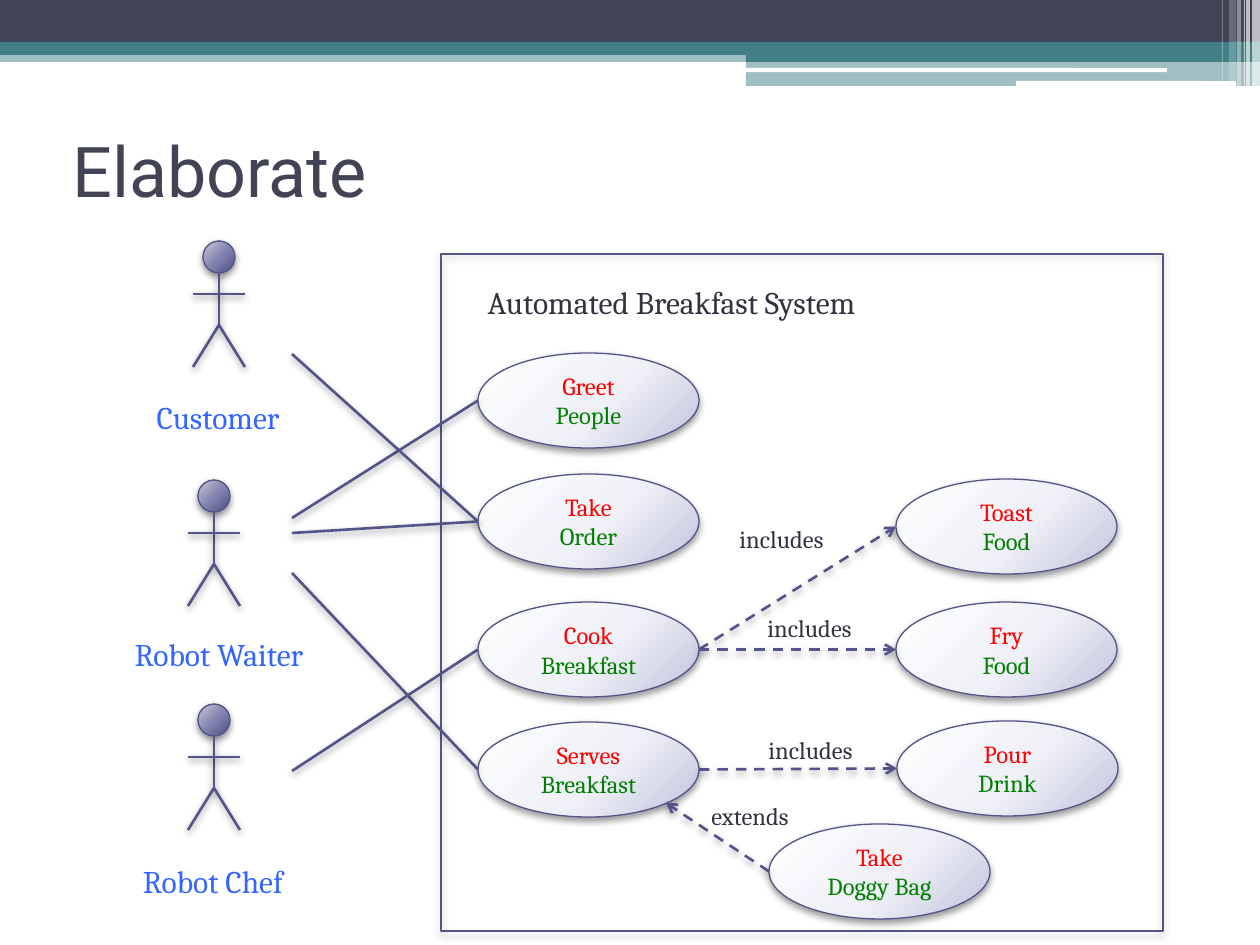
"""Build the Elaborate slide: a use case diagram of an automated breakfast system."""
from lxml.etree import SubElement
from pptx import Presentation
from pptx.dml.color import RGBColor as RGB
from pptx.enum.dml import MSO_LINE_DASH_STYLE as DASH
from pptx.enum.shapes import MSO_CONNECTOR as CONNECTOR, MSO_SHAPE as SHAPE
from pptx.enum.text import MSO_ANCHOR as ANCHOR, PP_ALIGN as ALIGN
from pptx.oxml.ns import qn
from pptx.util import Pt

PX = 914400 / 126
WIDTH, HEIGHT = 1260, 945
NAVY, TEAL, WHITE = RGB(0x42, 0x44, 0x56), RGB(0x43, 0x80, 0x86), RGB(255, 255, 255)
LINE, INK = RGB(0x53, 0x54, 0x8A), RGB(0x32, 0x33, 0x41)
BLUE, RED, GREEN = RGB(0x33, 0x66, 0xFF), RGB(255, 0, 0), RGB(0, 0x80, 0)
BLACK = RGB(0, 0, 0)
HEAD_STOPS = [(0, RGB(0xC9, 0xC9, 0xDA)), (55, RGB(0x7F, 0x80, 0xAE)),
              (100, RGB(0x4D, 0x4E, 0x81))]
CASE_STOPS = [(0, RGB(0xFE, 0xFE, 0xFE)), (55, RGB(0xF0, 0xF1, 0xF7)),
              (100, RGB(0xC2, 0xC2, 0xDD))]
GLOW_RECT = {"l": -40, "t": -90, "r": 140, "b": 190}

TITLE = ("Elaborate", (60, 96, 1134, 147))
BANDS = [
    ((0, 50, 1260, 12), TEAL, 50),
    ((0, 0, 1260, 42), NAVY, 100),
    ((0, 42, 1260, 13), TEAL, 100),
    ((746, 49, 514, 13), TEAL, 100),
    ((746, 61, 514, 25), TEAL, 50),
]
PILLS = [((745, 68, 422, 4), WHITE, 100), ((1016, 81, 220, 5), WHITE, 100)]
STRIPES = [
    ((1252, 0, 8, 86), WHITE, 65), ((1246, 0, 4, 86), WHITE, 65),
    ((1244, 0, 1, 86), WHITE, 60), ((1237, 0, 4, 86), WHITE, 40),
    ((1229, 0, 7, 81), WHITE, 20), ((1222, 0, 1, 81), WHITE, 30),
]
SYSTEM = ("Automated Breakfast System", (441, 254, 722, 677), (446, 277, 451, 50))
ACTORS = [
    ("Customer", (203, 241), (113, 392, 210, 50)),
    ("Robot Waiter", (198, 480), (93, 629, 252, 50)),
    ("Robot Chef", (198, 704), (108, 856, 210, 50)),
]
CASES = {
    ("Greet", "People"): (478, 353),
    ("Take", "Order"): (478, 474),
    ("Cook", "Breakfast"): (478, 602),
    ("Serves", "Breakfast"): (478, 722),
    ("Toast", "Food"): (896, 479),
    ("Fry", "Food"): (896, 602),
    ("Pour", "Drink"): (897, 721),
    ("Take", "Doggy Bag"): (769, 824),
}
CASE_W, CASE_H = 221, 95
LINK_X = 292
ACTOR_LINKS = [
    (518, ("Greet", "People")), (354, ("Take", "Order")), (533, ("Take", "Order")),
    (573, ("Serves", "Breakfast")), (771, ("Cook", "Breakfast")),
]
LEFT, RIGHT, LOWER_RIGHT = (0, 0.5), (1, 0.5), (0.85, 0.85)
CASE_LINKS = [
    ("includes", ("Cook", "Breakfast"), RIGHT, ("Toast", "Food"), LEFT, (727, 518, 117, 43)),
    ("includes", ("Cook", "Breakfast"), RIGHT, ("Fry", "Food"), LEFT, (755, 607, 117, 43)),
    ("includes", ("Serves", "Breakfast"), RIGHT, ("Pour", "Drink"), LEFT, (756, 729, 117, 43)),
    ("extends", ("Take", "Doggy Bag"), LEFT, ("Serves", "Breakfast"), LOWER_RIGHT,
     (699, 795, 110, 43)),
]


def emu(lengths):
    return [round(length * PX) for length in lengths]


def apply(target, values):
    for name, value in values.items():
        setattr(target, name, value)


def child(parent, tag, **attributes):
    return SubElement(parent, qn(tag), {k: str(v) for k, v in attributes.items()})


def cast_shadow(part, opacity=40):
    properties = part._element.spPr
    effects = properties.find(qn("a:effectLst"))
    if effects is None:
        effects = child(properties, "a:effectLst")
    shadow = child(effects, "a:outerShdw", blurRad=Pt(4.1), dist=Pt(2),
                   dir=5400000, rotWithShape=0)
    child(child(shadow, "a:srgbClr", val=BLACK), "a:alpha", val=opacity * 1000)


def add_shape(shapes, kind, box):
    shape = shapes.add_shape(kind, *emu(box))
    shape.shadow.inherit = False
    shape.fill.background()
    shape.line.fill.background()
    return shape


def add_band(shapes, kind, box, color, opacity):
    band = add_shape(shapes, kind, box)
    band.fill.solid()
    band.fill.fore_color.rgb = color
    if opacity < 100:
        paint = band._element.spPr.find(qn("a:solidFill"))[0]
        child(paint, "a:alpha", val=opacity * 1000)


def add_outlined(shapes, kind, box, stops=(), opacity=40):
    shape = add_shape(shapes, kind, box)
    shape.line.color.rgb = LINE
    shape.line.width = Pt(0.75)
    cast_shadow(shape, opacity)
    if stops:
        properties = shape._element.spPr
        gradient = child(properties, "a:gradFill", rotWithShape=1)
        properties.replace(properties.find(qn("a:noFill")), gradient)
        stop_list = child(gradient, "a:gsLst")
        for position, color in stops:
            child(child(stop_list, "a:gs", pos=position * 1000), "a:srgbClr", val=color)
        circle = child(gradient, "a:path", path="circle")
        child(circle, "a:fillToRect", **{k: v * 1000 for k, v in GLOW_RECT.items()})
    return shape


def add_line(shapes, start, end, arrow=False):
    line = shapes.add_connector(CONNECTOR.STRAIGHT, *emu((*start, *end)))
    line.line.color.rgb = LINE
    line.line.width = Pt(1.5)
    if arrow:
        line.line.dash_style = DASH.DASH
        child(line.line._get_or_add_ln(), "a:tailEnd", type="arrow")
    cast_shadow(line)


def write(paragraph, words, color, size, font="Cambria", align=ALIGN.CENTER):
    paragraph.alignment = align
    run = paragraph.add_run()
    run.text = words
    apply(run.font, {"name": font, "size": Pt(size)})
    run.font.color.rgb = color


def add_label(shapes, words, box, color, size=18, wrap=True, align=ALIGN.CENTER):
    frame = shapes.add_textbox(*emu(box)).text_frame
    frame.word_wrap = wrap
    write(frame.paragraphs[0], words, color, size, align=align)


def add_actor(shapes, x, y):
    figure = shapes.add_group_shape().shapes
    add_outlined(figure, SHAPE.OVAL, (x, y, 32, 32), HEAD_STOPS, 45)
    middle, hip, reach = x + 16, (x + 16, y + 84), 26
    add_line(figure, (middle, y + 32), hip)
    add_line(figure, (middle - reach, y + 53), (middle + reach, y + 53))
    for side in (-reach, reach):
        add_line(figure, hip, (middle + side, y + 126))


def add_case(shapes, words, corner):
    case = add_outlined(shapes, SHAPE.OVAL, (*corner, CASE_W, CASE_H), CASE_STOPS)
    frame = case.text_frame
    apply(frame, {"word_wrap": True, "vertical_anchor": ANCHOR.MIDDLE})
    verb, noun = words
    write(frame.paragraphs[0], verb, RED, 14)
    write(frame.add_paragraph(), noun, GREEN, 14)


def site(case, fraction):
    x, y = CASES[case]
    return x + CASE_W * fraction[0], y + CASE_H * fraction[1]


def main():
    deck = Presentation()
    deck.slide_width, deck.slide_height = emu((WIDTH, HEIGHT))
    slide = deck.slides.add_slide(deck.slide_layouts[5])
    shapes = slide.shapes
    for kind, group in ((SHAPE.RECTANGLE, BANDS), (SHAPE.ROUNDED_RECTANGLE, PILLS),
                        (SHAPE.RECTANGLE, STRIPES)):
        for band in group:
            add_band(shapes, kind, *band)

    heading, heading_box = TITLE
    apply(shapes.title, dict(zip(("left", "top", "width", "height"), emu(heading_box))))
    shapes.title.text_frame.vertical_anchor = ANCHOR.MIDDLE
    write(shapes.title.text_frame.paragraphs[0], heading, NAVY, 40, "Roboto", ALIGN.LEFT)

    system, border, system_box = SYSTEM
    add_outlined(shapes, SHAPE.RECTANGLE, border)
    add_label(shapes, system, system_box, INK)
    for actor, head, label_box in ACTORS:
        add_actor(shapes, *head)
        add_label(shapes, actor, label_box, BLUE)
    for words, corner in CASES.items():
        add_case(shapes, words, corner)
    for y, case in ACTOR_LINKS:
        add_line(shapes, (LINK_X, y), site(case, LEFT))
    for relation, source, exit_side, target, entry_side, label_box in CASE_LINKS:
        add_line(shapes, site(source, exit_side), site(target, entry_side), arrow=True)
        add_label(shapes, relation, label_box, INK, 14, False, ALIGN.LEFT)
    deck.save("out.pptx")


if __name__ == "__main__":
    main()
